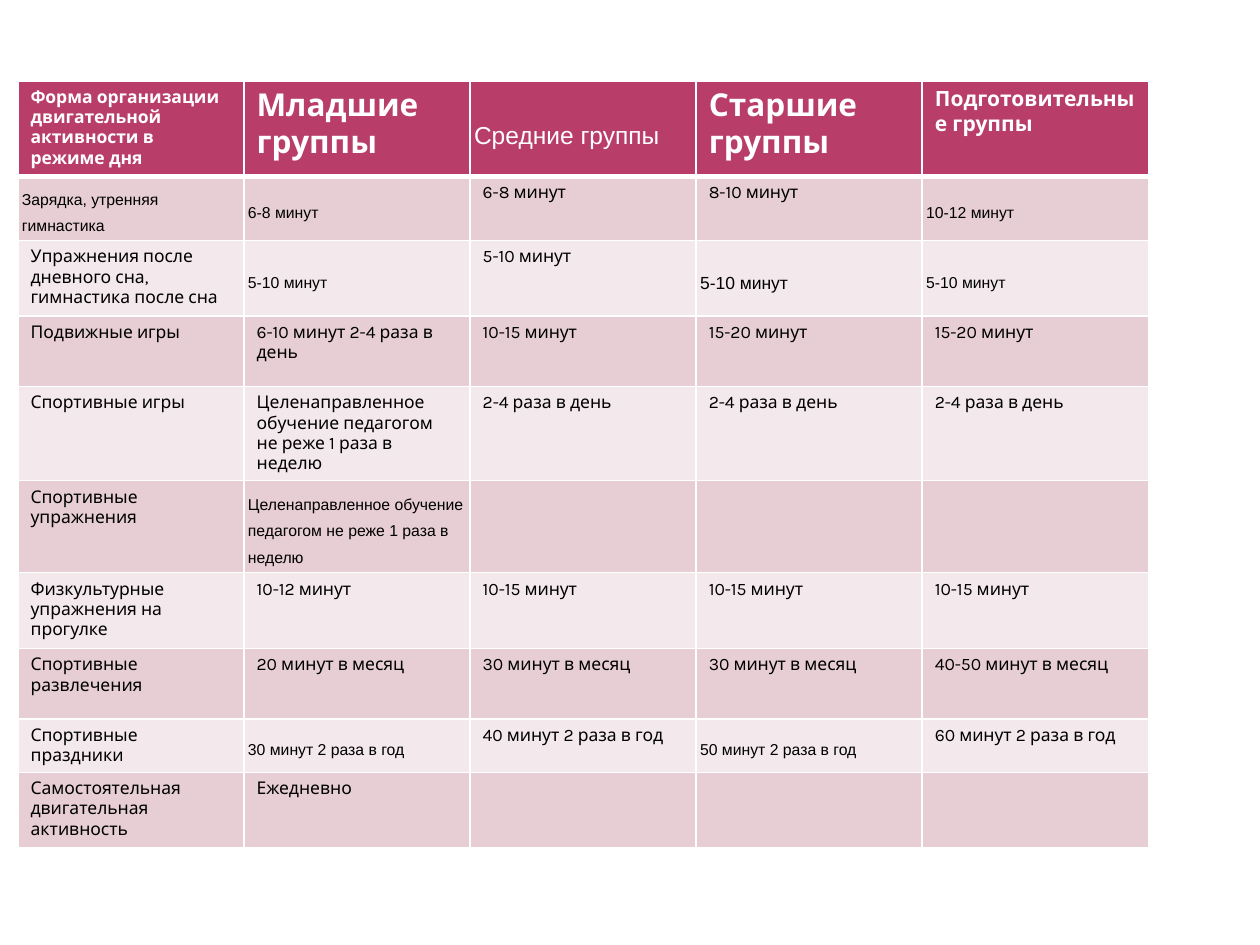
from lxml import etree
from pptx import Presentation
from pptx.dml.color import RGBColor
from pptx.enum.text import MSO_ANCHOR
from pptx.oxml.ns import qn
from pptx.util import Pt

MIDDLE = MSO_ANCHOR.MIDDLE
WHITE = RGBColor(0xFF, 0xFF, 0xFF)
BLACK = RGBColor(0, 0, 0)
ROSE = RGBColor(0xB8, 0x3D, 0x68)
PINK = RGBColor(0xE6, 0xCE, 0xD4)
PALE = RGBColor(0xF3, 0xE8, 0xEB)

LEFT, TOP, COL = 10.3, 46.2, 129.2
HEIGHTS = [54.6, 36.6, 43.2, 40.3, 43.2, 52.6, 43.2, 40.3, 28.8, 43.2]
COURSE = "Целенаправленное обучение педагогом не реже 1 раза в неделю"
ROWS = [
    ["Форма организации двигательной активности в режиме дня",
     "Младшие группы", "Средние группы", "Старшие группы",
     "Подготовительные группы"],
    ["Зарядка, утренняя гимнастика", "6-8 минут", "6-8 минут",
     "8-10 минут", "10-12 минут"],
    ["Упражнения после дневного сна, гимнастика после сна"]
    + ["5-10 минут"] * 4,
    ["Подвижные игры", "6-10 минут 2-4 раза в день", "10-15 минут",
     "15-20 минут", "15-20 минут"],
    ["Спортивные игры", COURSE] + ["2-4 раза в день"] * 3,
    ["Спортивные упражнения", COURSE, "", "", ""],
    ["Физкультурные упражнения на прогулке", "10-12 минут"]
    + ["10-15 минут"] * 3,
    ["Спортивные развлечения", "20 минут в месяц", "30 минут в месяц",
     "30 минут в месяц", "40-50 минут в месяц"],
    ["Спортивные праздники", "30 минут 2 раза в год",
     "40 минут 2 раза в год", "50 минут 2 раза в год",
     "60 минут 2 раза в год"],
    ["Самостоятельная двигательная активность", "Ежедневно", "", "", ""],
]
HEAD_SIZES = [10, 18, 14, 18, 12]
# Arial cells with narrow margins: (row, column) -> text size
TIGHT = {(0, 2): 14, (1, 0): 9, (1, 1): 9, (1, 4): 9, (2, 1): 9,
         (2, 3): 10, (2, 4): 9, (5, 1): 9, (8, 1): 9, (8, 3): 9}


def set_lines(cell, base):
    """Draw white cell borders; base is the width of the lower one."""
    props = cell._tc.get_or_add_tcPr()
    for side, width in (("L", 1), ("R", 1), ("T", 1), ("B", base)):
        line = etree.SubElement(props, qn(f"a:ln{side}"), w=str(Pt(width)))
        fill = etree.SubElement(line, qn("a:solidFill"))
        etree.SubElement(fill, qn("a:srgbClr"), val=str(WHITE))


def add_text(cell, text, size, color, bold, tight):
    para = cell.text_frame.paragraphs[0]
    if tight:
        cell.vertical_anchor = MIDDLE
        cell.margin_left = cell.margin_right = Pt(2.25)
        cell.margin_top = cell.margin_bottom = Pt(2.25)
        para.line_spacing = 1.5
        para.space_after = Pt(4.5)
    run = para.add_run()
    run.text = text
    font = run.font
    font.name = "Arial" if tight else "Karla"
    font.size = Pt(size)
    font.bold = bold
    font.color.rgb = color


def fill_cell(cell, row, col, text):
    head = row == 0
    tight = (row, col) in TIGHT
    set_lines(cell, 3 if head else 1)
    cell.fill.solid()
    cell.fill.fore_color.rgb = ROSE if head else PINK if row % 2 else PALE
    if text:
        size = TIGHT.get((row, col), HEAD_SIZES[col] if head else 10)
        add_text(cell, text, size, WHITE if head else BLACK,
                 head and not tight, tight)


def add_grid(slide):
    count = len(ROWS[0])
    frame = slide.shapes.add_table(len(ROWS), count, Pt(LEFT), Pt(TOP),
                                   Pt(COL * count), Pt(sum(HEIGHTS)))
    table = frame.table
    for col in table.columns:
        col.width = Pt(COL)
    for row, texts in enumerate(ROWS):
        table.rows[row].height = Pt(HEIGHTS[row])
        for col, text in enumerate(texts):
            fill_cell(table.cell(row, col), row, col, text)


def main():
    deck = Presentation()
    deck.slide_width, deck.slide_height = Pt(720), Pt(540)
    add_grid(deck.slides.add_slide(deck.slide_layouts[6]))
    deck.save("out.pptx")


if __name__ == "__main__":
    main()
